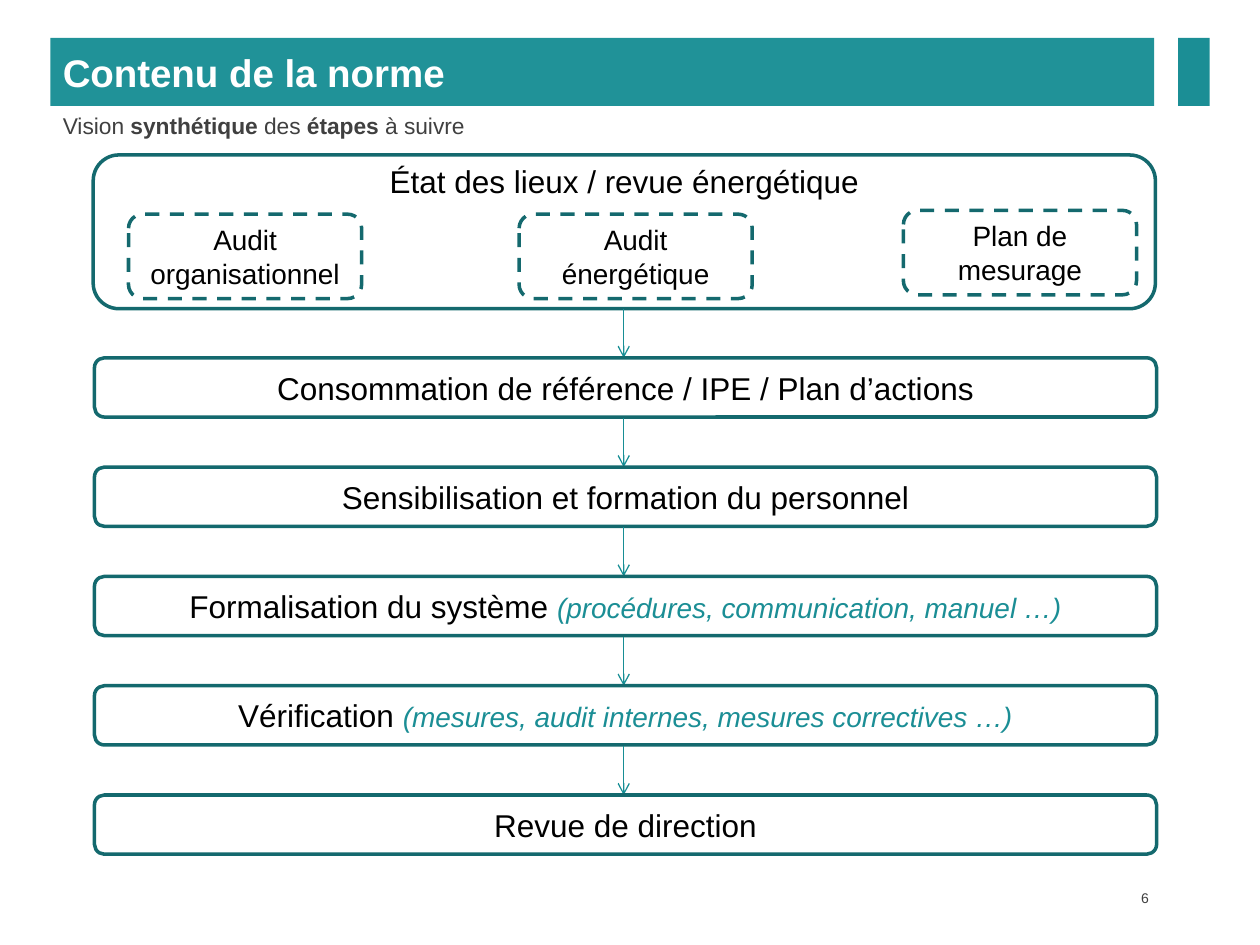
from dataclasses import dataclass
from typing import Optional

from lxml.etree import SubElement
from pptx import Presentation
from pptx.dml.color import RGBColor
from pptx.enum.dml import MSO_LINE
from pptx.enum.shapes import MSO_CONNECTOR, MSO_SHAPE
from pptx.enum.text import MSO_ANCHOR, PP_ALIGN
from pptx.oxml.ns import qn
from pptx.util import Inches, Pt

FONT = "Arial"
BLACK, GREY, WHITE = "000000", "404040", "FFFFFF"
OUTLINE, ACCENT, BANNER, ARROW = "14696E", "1B8E95", "209298", "178E95"

STEP_LEFT, STEP_WIDTH, STEP_HEIGHT = 0.75, 8.43, 0.47
FIRST_STEP_TOP, LAST_STEP_TOP = 2.84, 6.31
ARROW_X, ARROW_LENGTH = 4.95, 0.39


@dataclass
class Area:
    left: float
    top: float
    width: float
    height: float

    def lengths(self):
        return [Inches(v) for v in (self.left, self.top, self.width, self.height)]


@dataclass
class Span:
    text: str
    size: float = 18
    color: str = BLACK
    bold: bool = False
    italic: bool = False


@dataclass
class Step:
    title: str
    detail: str = ""

    def spans(self) -> list[Span]:
        spans = [Span(self.title)]
        if self.detail:
            spans.append(Span(self.detail, 16, ACCENT, italic=True))
        return spans


@dataclass
class Audit:
    label: str
    left: float
    top: float


STEPS = [
    Step("Consommation de référence / IPE / Plan d’actions"),
    Step("Sensibilisation et formation du personnel"),
    Step("Formalisation du système ", "(procédures, communication, manuel …)"),
    Step("Vérification ", "(mesures, audit internes, mesures correctives …)"),
    Step("Revue de direction"),
]

AUDITS = [
    Audit("Audit organisationnel", 1.02, 1.7),
    Audit("Audit énergétique", 4.12, 1.7),
    Audit("Plan de mesurage", 7.17, 1.67),
]


def rgb(color: str) -> RGBColor:
    return RGBColor.from_string(color)


def write(shape, spans: list[Span], align=PP_ALIGN.CENTER, anchor=MSO_ANCHOR.MIDDLE) -> None:
    frame = shape.text_frame
    frame.word_wrap = True
    frame.vertical_anchor = anchor
    para = frame.paragraphs[0]
    para.alignment = align
    for span in spans:
        run = para.add_run()
        run.text = span.text
        font = run.font
        font.name = FONT
        font.size = Pt(span.size)
        font.bold = span.bold
        font.italic = span.italic
        font.color.rgb = rgb(span.color)


def add_text(page, area: Area, spans: list[Span], align=PP_ALIGN.LEFT):
    box = page.shapes.add_textbox(*area.lengths())
    write(box, spans, align)
    return box


def add_bar(page, area: Area, color: str):
    bar = page.shapes.add_shape(MSO_SHAPE.RECTANGLE, *area.lengths())
    bar.shadow.inherit = False
    bar.fill.solid()
    bar.fill.fore_color.rgb = rgb(color)
    bar.line.fill.background()
    return bar


def add_frame(page, area: Area, spans: list[Span], dash: Optional[MSO_LINE] = None,
              anchor=MSO_ANCHOR.MIDDLE):
    """Draw a rounded, unfilled box with centred text."""
    box = page.shapes.add_shape(MSO_SHAPE.ROUNDED_RECTANGLE, *area.lengths())
    box.shadow.inherit = False
    box.fill.background()
    box.line.color.rgb = rgb(OUTLINE)
    box.line.width = Pt(2)
    if dash is not None:
        box.line.dash_style = dash
    write(box, spans, anchor=anchor)
    return box


def add_arrow_down(page, x: float, top: float, bottom: float) -> None:
    arrow = page.shapes.add_connector(
        MSO_CONNECTOR.STRAIGHT, Inches(x), Inches(top), Inches(x), Inches(bottom))
    arrow.line.color.rgb = rgb(ARROW)
    arrow.line.width = Pt(0.75)
    SubElement(arrow.line._get_or_add_ln(), qn("a:tailEnd"), type="arrow")
    SubElement(arrow._element.spPr, qn("a:effectLst"))


def add_header(page) -> None:
    title = add_bar(page, Area(0.4, 0.3, 8.76, 0.54), BANNER)
    write(title, [Span("Contenu de la norme", 22, WHITE, bold=True)], PP_ALIGN.LEFT)
    add_bar(page, Area(9.35, 0.3, 0.25, 0.54), ACCENT)
    add_text(page, Area(0.4, 0.84, 9.19, 0.31), [
        Span("Vision ", 13, GREY),
        Span("synthétique", 13, GREY, bold=True),
        Span(" des ", 13, GREY),
        Span("étapes", 13, GREY, bold=True),
        Span(" à suivre", 13, GREY),
    ])


def add_review(page) -> None:
    review = add_frame(page, Area(0.74, 1.23, 8.43, 1.22),
                       [Span("État des lieux / revue énergétique")], anchor=MSO_ANCHOR.TOP)
    review.text_frame.margin_top = Inches(0)
    for audit in AUDITS:
        add_frame(page, Area(audit.left, audit.top, 1.85, 0.67),
                  [Span(audit.label, 16)], MSO_LINE.DASH)


def add_steps(page) -> None:
    pitch = (LAST_STEP_TOP - FIRST_STEP_TOP) / (len(STEPS) - 1)
    for index, step in enumerate(STEPS):
        top = FIRST_STEP_TOP + index * pitch
        add_arrow_down(page, ARROW_X, top - ARROW_LENGTH, top)
        add_frame(page, Area(STEP_LEFT, top, STEP_WIDTH, STEP_HEIGHT), step.spans())


def main() -> None:
    deck = Presentation()
    deck.slide_width, deck.slide_height = Inches(10), Inches(7.5)
    page = deck.slides.add_slide(deck.slide_layouts[6])
    add_header(page)
    add_review(page)
    add_steps(page)
    number = add_text(page, Area(8.6, 7.03, 0.56, 0.2), [Span("6", 8, GREY)], PP_ALIGN.RIGHT)
    number.text_frame.margin_right = Inches(0.04)
    deck.save("out.pptx")


if __name__ == "__main__":
    main()
